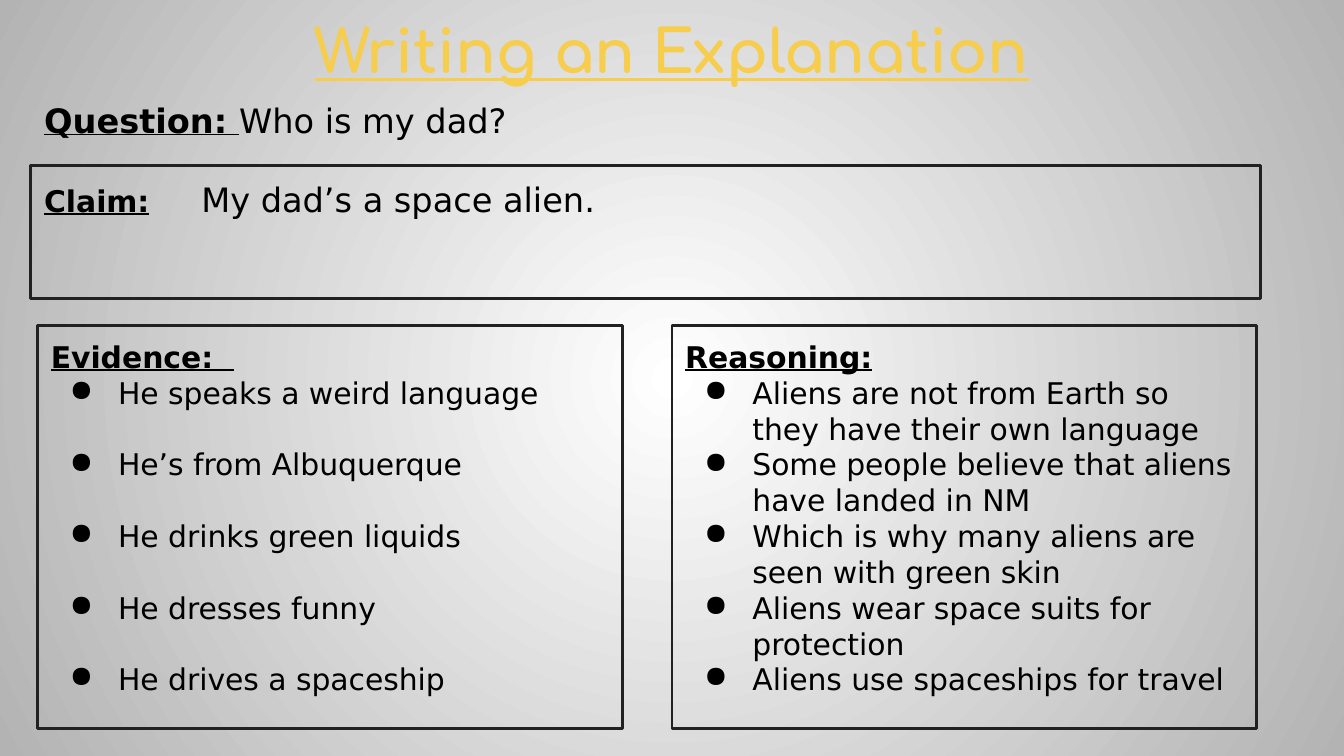
from dataclasses import dataclass

from lxml import etree
from pptx import Presentation
from pptx.dml.color import RGBColor
from pptx.enum.shapes import MSO_SHAPE
from pptx.enum.text import MSO_ANCHOR, PP_ALIGN
from pptx.oxml import parse_xml
from pptx.oxml.ns import nsdecls, qn
from pptx.util import Inches, Pt

RECTANGLE = MSO_SHAPE.RECTANGLE
TOP = MSO_ANCHOR.TOP
LEFT, CENTER = PP_ALIGN.LEFT, PP_ALIGN.CENTER


@dataclass(frozen=True)
class Theme:
    heading_font: str = "Comfortaa"
    body_font: str = "DejaVu Sans"
    gold: str = "F6CD4C"
    ink: str = "000000"
    border: str = "212121"
    glow: str = "FFFFFF"
    edge: str = "B3B3B3"
    heading_size: int = 32
    lead_size: int = 18
    body_size: int = 16
    border_width: float = 1.5


THEME = Theme()

# Page geometry, in inches
WIDTH = 10
HEIGHT = WIDTH * 9 / 16
MARGIN = 0.23
PADDING = 0.1
COLUMN_LEFT, COLUMN_WIDTH, COLUMN_STEP = 0.28, 4.35, 4.72
COLUMN_TOP, COLUMN_HEIGHT = 2.42, 3
CLAIM_TAB = 1.17
BULLET_INDENT, BULLET_HANG = 0.5, 0.36
LINE_GAP = 19.2  # points, one empty body line

EVIDENCE = [
    "He speaks a weird language",
    "He’s from Albuquerque",
    "He drinks green liquids",
    "He dresses funny",
    "He drives a spaceship",
]
REASONING = [
    "Aliens are not from Earth so they have their own language",
    "Some people believe that aliens have landed in NM",
    "Which is why many aliens are seen with green skin",
    "Aliens wear space suits for protection",
    "Aliens use spaceships for travel",
]


def add_background(slide):
    """Radial gradient, light in the middle."""
    background = parse_xml(
        f'<p:bg {nsdecls("p", "a")}><p:bgPr><a:gradFill><a:gsLst>'
        f'<a:gs pos="0"><a:srgbClr val="{THEME.glow}"/></a:gs>'
        f'<a:gs pos="100000"><a:srgbClr val="{THEME.edge}"/></a:gs>'
        '</a:gsLst><a:path path="circle">'
        '<a:fillToRect l="50000" t="50000" r="50000" b="50000"/></a:path>'
        '</a:gradFill><a:effectLst/></p:bgPr></p:bg>')
    slide.element.cSld.insert(0, background)


def add_run(paragraph, text, size, font=THEME.body_font, color=THEME.ink,
            label=False):
    """Labels are bold and underlined."""
    run = paragraph.add_run()
    run.text = text
    run.font.name = font
    run.font.size = Pt(size)
    run.font.color.rgb = RGBColor.from_string(color)
    run.font.bold = run.font.underline = label


def prepare_text(shape):
    frame = shape.text_frame
    frame.word_wrap = True
    frame.vertical_anchor = TOP
    frame.margin_left = frame.margin_right = Inches(PADDING)
    frame.margin_top = frame.margin_bottom = Inches(PADDING)
    frame.paragraphs[0].alignment = LEFT
    return frame


def add_text_area(slide, box):
    return prepare_text(slide.shapes.add_textbox(*map(Inches, box)))


def add_panel(slide, box):
    """Outlined, unfilled rectangle."""
    panel = slide.shapes.add_shape(RECTANGLE, *map(Inches, box))
    panel.shadow.inherit = False
    panel.fill.background()
    panel.line.color.rgb = RGBColor.from_string(THEME.border)
    panel.line.width = Pt(THEME.border_width)
    return prepare_text(panel)


def add_bullet(paragraph):
    properties = paragraph._p.get_or_add_pPr()
    properties.set("marL", str(Inches(BULLET_INDENT)))
    properties.set("indent", str(-Inches(BULLET_HANG)))
    color = etree.SubElement(properties, qn("a:buClr"))
    etree.SubElement(color, qn("a:srgbClr"), val=THEME.ink)
    etree.SubElement(properties, qn("a:buChar"), char="●")


def add_tab_stop(paragraph, position):
    properties = paragraph._p.get_or_add_pPr()
    stops = etree.SubElement(properties, qn("a:tabLst"))
    etree.SubElement(stops, qn("a:tab"), pos=str(Inches(position)), algn="l")


def add_title(slide, box):
    title = add_text_area(slide, box).paragraphs[0]
    title.alignment = CENTER
    add_run(title, "Writing an Explanation", THEME.heading_size,
            THEME.heading_font, THEME.gold, label=True)


def add_question(slide, box):
    question = add_text_area(slide, box).paragraphs[0]
    add_run(question, "Question: ", THEME.lead_size, label=True)
    add_run(question, "Who is my dad?", THEME.lead_size)


def add_claim(slide, box):
    claim = add_panel(slide, box).paragraphs[0]
    add_tab_stop(claim, CLAIM_TAB)
    add_run(claim, "Claim:", THEME.body_size, label=True)
    add_run(claim, "\tMy dad’s a space alien.", THEME.lead_size)


def add_list_panel(slide, box, heading, points, gap):
    """Heading with bulleted points, gap points apart."""
    frame = add_panel(slide, box)
    add_run(frame.paragraphs[0], heading, THEME.body_size, label=True)
    for index, point in enumerate(points):
        bullet = frame.add_paragraph()
        bullet.alignment = LEFT
        bullet.space_before = Pt(gap if index else 0)
        add_bullet(bullet)
        add_run(bullet, point, THEME.body_size)


def main():
    deck = Presentation()
    deck.slide_width, deck.slide_height = Inches(WIDTH), Inches(HEIGHT)
    slide = deck.slides.add_slide(deck.slide_layouts[6])

    add_background(slide)
    add_title(slide, (0, 0, WIDTH, 0.7))
    add_question(slide, (MARGIN, 0.64, 4.45, 0.59))
    add_claim(slide, (MARGIN, 1.23, 9.15, 0.99))

    # Two equal columns
    columns = [("Evidence:  ", EVIDENCE, LINE_GAP), ("Reasoning:", REASONING, 0)]
    for index, (heading, points, gap) in enumerate(columns):
        left = COLUMN_LEFT + index * COLUMN_STEP
        box = (left, COLUMN_TOP, COLUMN_WIDTH, COLUMN_HEIGHT)
        add_list_panel(slide, box, heading, points, gap)

    deck.save("out.pptx")


if __name__ == "__main__":
    main()
